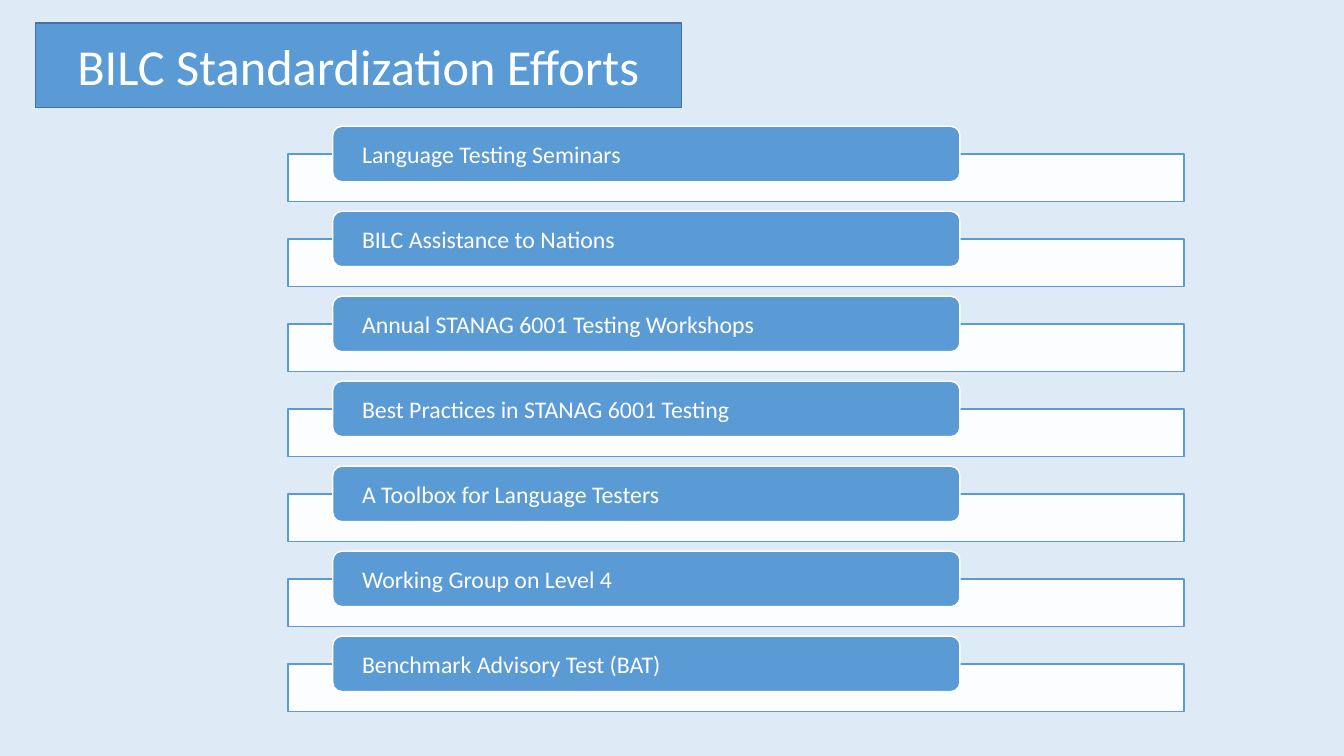
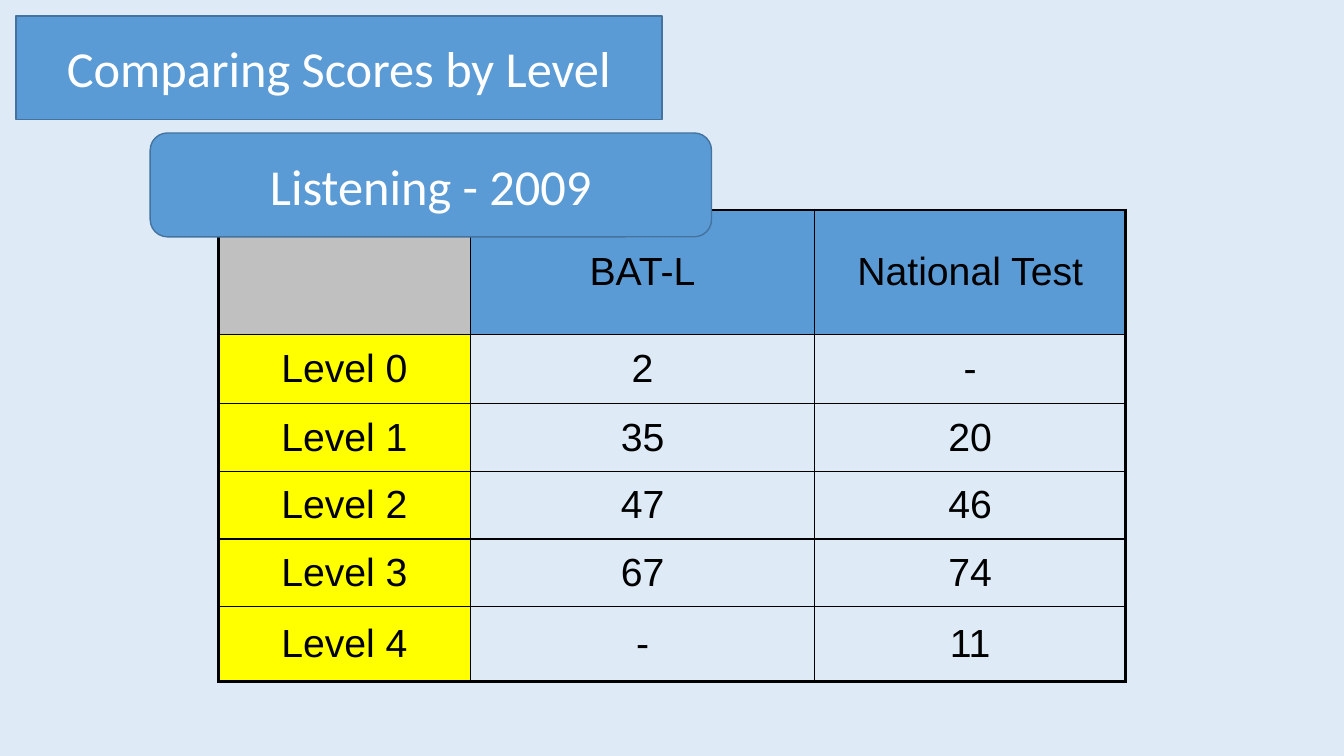
from dataclasses import dataclass

from pptx import Presentation
from pptx.dml.color import RGBColor
from pptx.enum.shapes import MSO_SHAPE
from pptx.enum.text import MSO_ANCHOR, MSO_AUTO_SIZE, PP_ALIGN
from pptx.oxml import parse_xml
from pptx.oxml.ns import nsdecls
from pptx.oxml.xmlchemy import OxmlElement
from pptx.util import Pt


@dataclass(frozen=True)
class Theme:
    background: str = "DEEBF7"
    accent: str = "5B9BD5"
    accent_edge: str = "43739E"
    light: str = "FFFFFF"
    dark: str = "000000"
    corner: str = "C0C0C0"
    level: str = "FFFF00"
    font: str = "Calibri"
    table_font: str = "Arial"
    title_size: int = 36
    item_size: int = 17
    table_size: int = 28
    thin: float = 1
    thick: float = 2.25


THEME = Theme()


# Shared helpers
def color(value):
    return RGBColor.from_string(value)


def place(shape, box):
    shape.left, shape.top, shape.width, shape.height = map(Pt, box)


def paint(shape, fill, line):
    shape.fill.solid()
    shape.fill.fore_color.rgb = color(fill)
    shape.line.color.rgb = color(line)
    shape.line.width = Pt(THEME.thin)


def add_box(slide, kind, box, fill, line):
    shape = slide.shapes.add_shape(kind, *map(Pt, box))
    shape.shadow.inherit = False
    paint(shape, fill, line)
    return shape


def write(text_frame, text, size, font, text_color, align):
    text_frame.text = text
    paragraph = text_frame.paragraphs[0]
    paragraph.alignment = align
    paragraph.font.size = Pt(size)
    paragraph.font.name = font
    paragraph.font.color.rgb = color(text_color)


def write_banner(shape, text):
    frame = shape.text_frame
    frame.word_wrap = True
    frame.auto_size = MSO_AUTO_SIZE.NONE
    frame.vertical_anchor = MSO_ANCHOR.MIDDLE
    write(frame, text, THEME.title_size, THEME.font, THEME.light, PP_ALIGN.CENTER)


def add_titled_slide(presentation, text, box):
    slide = presentation.slides.add_slide(presentation.slide_layouts[5])
    title = slide.shapes.title
    place(title, box)
    # Rounded outline for the title placeholder
    outline = parse_xml(f'<a:prstGeom {nsdecls("a")} prst="roundRect"><a:avLst/></a:prstGeom>')
    title.fill.background()
    title.element.spPr.insert(1, outline)
    paint(title, THEME.accent, THEME.accent_edge)
    write_banner(title, text)
    return slide


def add_subtitle_banner(slide, text, box):
    banner = add_box(slide, MSO_SHAPE.ROUNDED_RECTANGLE, box, THEME.accent, THEME.accent_edge)
    write_banner(banner, text)


# List of efforts: a pale bar with a tab over its upper edge
def add_effort_list(slide, items, box):
    left, top, width, height = box
    tab_height, bar_offset, bar_height = 39.6, 19.8, 34
    pitch = (height - bar_offset - bar_height) / (len(items) - 1)
    for index, item in enumerate(items):
        row_top = top + index * pitch
        bar = add_box(slide, MSO_SHAPE.RECTANGLE,
                      (left, row_top + bar_offset, width, bar_height),
                      THEME.light, THEME.accent)
        alpha = OxmlElement("a:alpha")
        alpha.set("val", "90000")
        bar.element.spPr.find(".//" + "{*}srgbClr").append(alpha)

        tab = add_box(slide, MSO_SHAPE.ROUNDED_RECTANGLE,
                      (left + width * 0.05, row_top, width * 0.7, tab_height),
                      THEME.accent, THEME.light)
        frame = tab.text_frame
        frame.word_wrap = True
        frame.vertical_anchor = MSO_ANCHOR.MIDDLE
        frame.margin_left = frame.margin_right = Pt(19)
        frame.margin_top = frame.margin_bottom = 0
        write(frame, item, THEME.item_size, THEME.font, THEME.light, PP_ALIGN.LEFT)


# Score table
def set_borders(cell, widths):
    properties = cell._tc.get_or_add_tcPr()
    for side, width in zip("LRTB", widths):
        properties.append(parse_xml(
            f'<a:ln{side} {nsdecls("a")} w="{Pt(width)}"><a:solidFill>'
            f'<a:srgbClr val="{THEME.dark}"/></a:solidFill></a:ln{side}>'))


def cell_fill(row, column):
    if column == 0:
        return THEME.level if row else THEME.corner
    return None if row else THEME.accent


def add_score_table(slide, rows, box, column_widths, row_heights):
    last_row, last_column = len(rows) - 1, len(rows[0]) - 1
    table = slide.shapes.add_table(len(rows), len(rows[0]), *map(Pt, box)).table
    table.first_row = table.horz_banding = False
    for column, width in zip(table.columns, column_widths):
        column.width = Pt(width)
    for row, height in zip(table.rows, row_heights):
        row.height = Pt(height)
    for r, values in enumerate(rows):
        for c, value in enumerate(values):
            cell = table.cell(r, c)
            outer = (c == 0, c == last_column, r == 0, r == last_row)
            set_borders(cell, [THEME.thick if edge else THEME.thin for edge in outer])
            fill = cell_fill(r, c)
            if fill:
                cell.fill.solid()
                cell.fill.fore_color.rgb = color(fill)
            else:
                cell.fill.background()
            cell.vertical_anchor = MSO_ANCHOR.MIDDLE
            write(cell.text_frame, value, THEME.table_size, THEME.table_font,
                  THEME.dark, PP_ALIGN.CENTER)


# Slides
def build_efforts_slide(presentation):
    slide = add_titled_slide(presentation, "BILC Standardization Efforts",
                             (25.2, 16.4, 461.5, 60.5))
    items = [
        "Language Testing Seminars",
        "BILC Assistance to Nations",
        "Annual STANAG 6001 Testing Workshops",
        "Best Practices in STANAG 6001 Testing",
        "A Toolbox for Language Testers",
        "Working Group on Level 4",
        "Benchmark Advisory Test (BAT)",
    ]
    add_effort_list(slide, items, (205.7, 90.2, 640, 418))


def build_scores_slide(presentation):
    slide = add_titled_slide(presentation, "Comparing Scores by Level",
                             (11.3, 11.3, 461.5, 74.2))
    rows = [
        ("", "BAT-L", "National Test"),
        ("Level 0", "2", "-"),
        ("Level 1", "35", "20"),
        ("Level 2", "47", "46"),
        ("Level 3", "67", "74"),
        ("Level 4", "-", "11"),
    ]
    add_score_table(slide, rows, (156, 150, 648, 337),
                    (180, 246, 222), (89, 49, 49, 48, 48, 54))
    add_subtitle_banner(slide, "Listening - 2009", (107.3, 95, 401, 74.2))


def main():
    presentation = Presentation()
    presentation.slide_width, presentation.slide_height = Pt(960), Pt(540)
    background = presentation.slide_master.background.fill
    background.solid()
    background.fore_color.rgb = color(THEME.background)
    build_efforts_slide(presentation)
    build_scores_slide(presentation)
    presentation.save("out.pptx")


if __name__ == "__main__":
    main()
